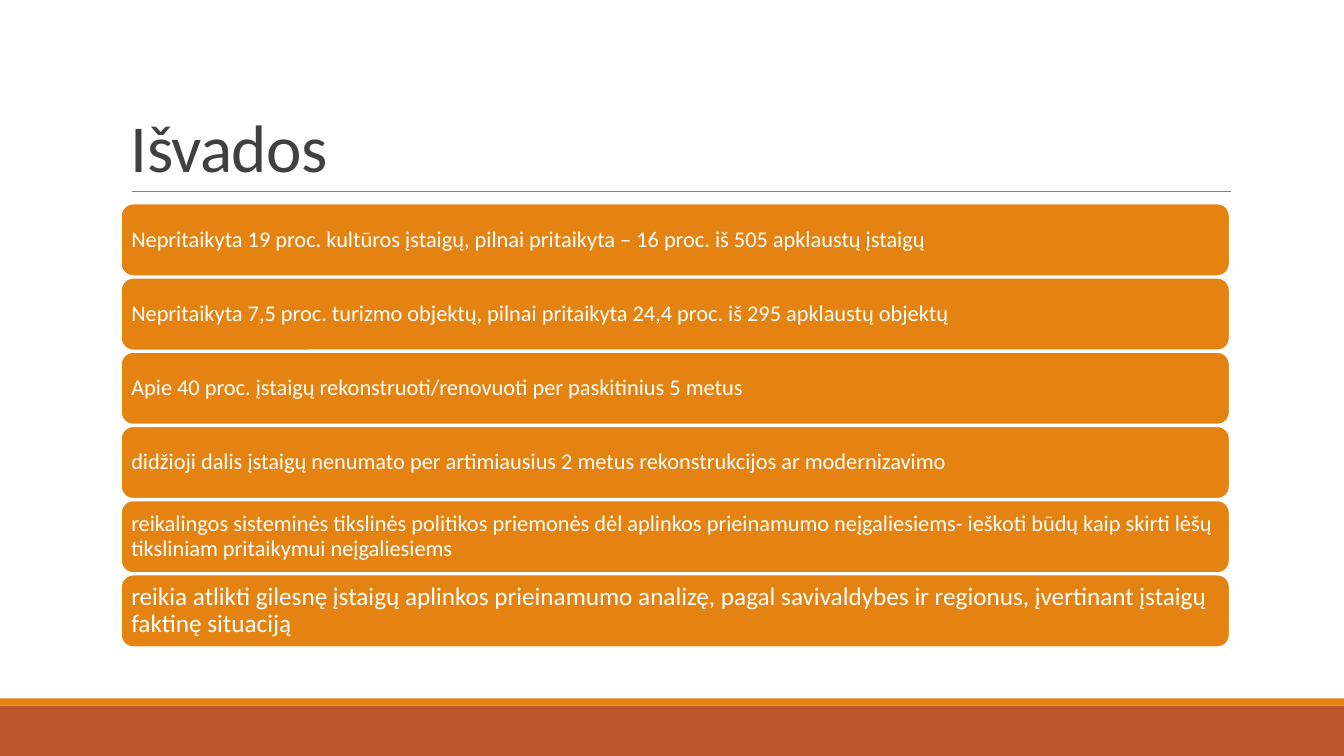
from pptx import Presentation
from pptx import util as u
from pptx.dml.color import RGBColor
from pptx.enum import shapes, text
from pptx.oxml.ns import qn
from lxml import etree

# Content
TITLE = "Išvados"
CONCLUSIONS = [
    ("Nepritaikyta 19 proc. kultūros įstaigų, pilnai pritaikyta – 16 proc. iš 505 apklaustų įstaigų", 16),
    ("Nepritaikyta 7,5 proc. turizmo objektų, pilnai pritaikyta 24,4 proc. iš 295 apklaustų objektų", 16),
    ("Apie 40 proc. įstaigų rekonstruoti/renovuoti per paskitinius 5 metus", 16),
    ("didžioji dalis įstaigų nenumato per artimiausius 2 metus rekonstrukcijos ar modernizavimo", 16),
    ("reikalingos sisteminės tikslinės politikos priemonės dėl aplinkos prieinamumo neįgaliesiems- "
     "ieškoti būdų kaip skirti lėšų tiksliniam pritaikymui neįgaliesiems", 16),
    ("reikia atlikti gilesnę įstaigų aplinkos prieinamumo analizę, pagal savivaldybes ir regionus, "
     "įvertinant įstaigų faktinę situaciją", 18),
]

# Colours and measures (cm)
ORANGE = RGBColor(0xE4, 0x83, 0x12)
RUST = RGBColor(0xBD, 0x58, 0x2C)
WHITE = RGBColor(0xFF, 0xFF, 0xFF)
DARK = RGBColor(0x40, 0x40, 0x40)
GREY = RGBColor(0x80, 0x80, 0x80)
FONT = "Calibri"
SLIDE_WIDTH, SLIDE_HEIGHT = 33.87, 19.05
LEFT, WIDTH = 3.05, 27.94
FIRST_TOP, BAR_HEIGHT, PITCH = 5.13, 1.83, 1.87
RULE_Y = 4.83


def write(shape, words, size, color, anchor, line_spacing, inset_x, inset_y, tracking=None):
    frame = shape.text_frame
    frame.word_wrap = True
    frame.vertical_anchor = anchor
    frame.margin_left = frame.margin_right = u.Cm(inset_x)
    frame.margin_top = frame.margin_bottom = u.Cm(inset_y)
    paragraph = frame.paragraphs[0]
    paragraph.alignment = text.PP_ALIGN.LEFT
    paragraph.line_spacing = line_spacing
    run = paragraph.add_run()
    run.text = words
    run.font.name = FONT
    run.font.size = u.Pt(size)
    run.font.color.rgb = color
    if tracking is not None:
        run._r.get_or_add_rPr().set("spc", str(round(tracking * 100)))


def add_block(slide, kind, left, top, width, height, fill, outline=None):
    shape = slide.shapes.add_shape(kind, u.Cm(left), u.Cm(top), u.Cm(width), u.Cm(height))
    shape.shadow.inherit = False
    shape.fill.solid()
    shape.fill.fore_color.rgb = fill
    if outline is None:
        shape.line.fill.background()
    else:
        shape.line.color.rgb = outline
        shape.line.width = u.Pt(1.25)
    return shape


def main():
    presentation = Presentation()
    presentation.slide_width = u.Cm(SLIDE_WIDTH)
    presentation.slide_height = u.Cm(SLIDE_HEIGHT)
    slide = presentation.slides.add_slide(presentation.slide_layouts[6])

    # Footer bands
    for top, height, fill in ((17.78, 1.27, RUST), (17.6, 0.18, ORANGE)):
        add_block(slide, shapes.MSO_SHAPE.RECTANGLE, 0, top, SLIDE_WIDTH, height, fill)

    # Title and rule
    rule = slide.shapes.add_connector(
        shapes.MSO_CONNECTOR.STRAIGHT, u.Cm(3.33), u.Cm(RULE_Y), u.Cm(31.01), u.Cm(RULE_Y))
    rule.line.color.rgb = GREY
    rule.line.width = u.Pt(0.5)
    etree.SubElement(rule._element.spPr, qn("a:effectLst"))
    title = slide.shapes.add_textbox(u.Cm(LEFT), u.Cm(0.79), u.Cm(WIDTH), u.Cm(4.04))
    write(title, TITLE, 48, DARK, text.MSO_ANCHOR.BOTTOM, 0.85, 0.25, 0.13, tracking=-0.5)

    # Conclusion bars
    for index, (words, size) in enumerate(CONCLUSIONS):
        bar = add_block(slide, shapes.MSO_SHAPE.ROUNDED_RECTANGLE, LEFT,
                        FIRST_TOP + index * PITCH, WIDTH, BAR_HEIGHT, ORANGE, WHITE)
        write(bar, words, size, WHITE, text.MSO_ANCHOR.MIDDLE, 0.9, 0.17, 0.17)

    presentation.save("out.pptx")


if __name__ == "__main__":
    main()
